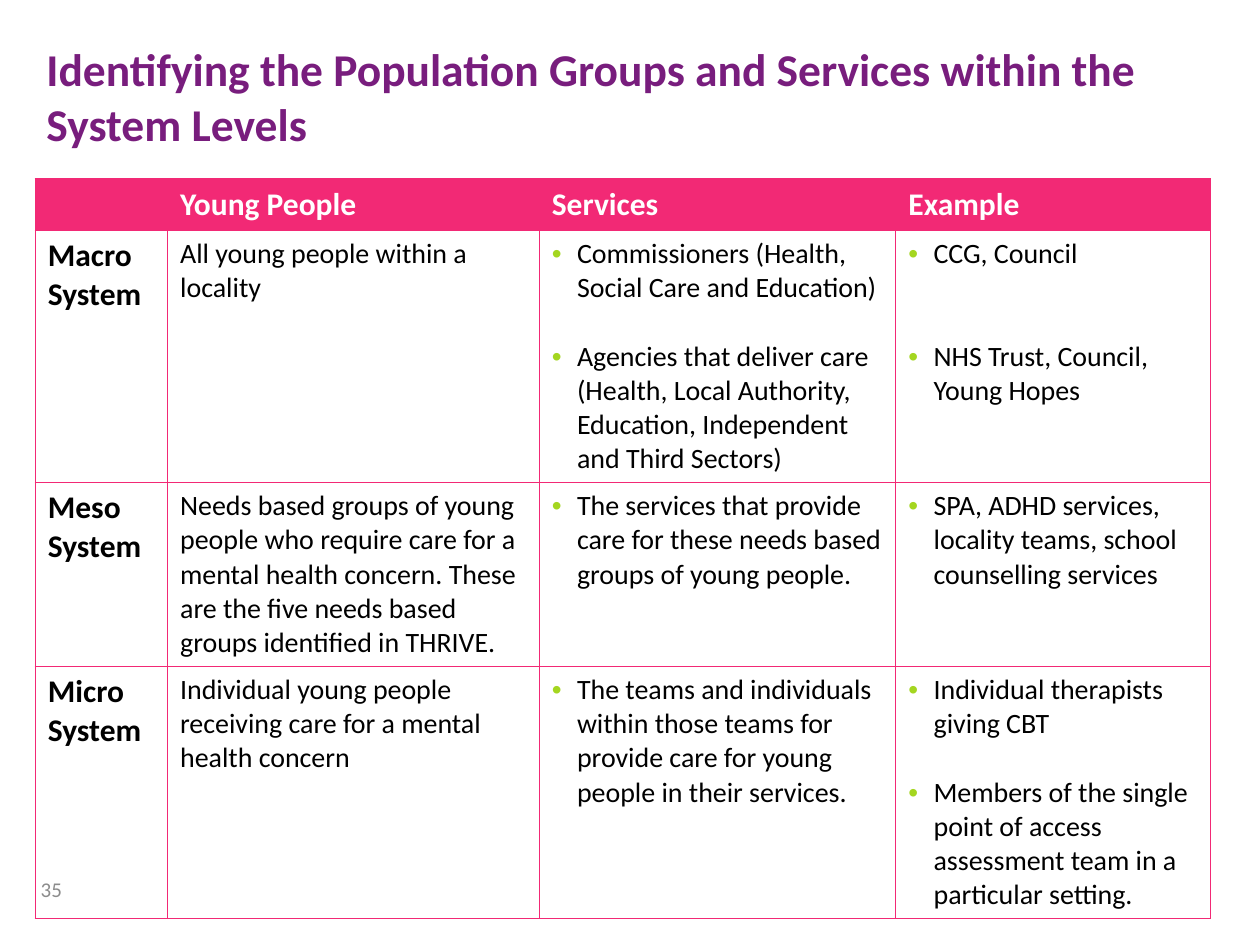
import pptx
import pptx.util
import pptx.dml.color
import pptx.enum.text
import pptx.oxml.ns
import lxml.etree
from dataclasses import dataclass

Inches = pptx.util.Inches
Pt = pptx.util.Pt

TITLE = "Identifying the Population Groups and Services within the System Levels"
PAGE_NUMBER = "35"
HEADERS = ["", "Young People", "Services", "Example"]
LEVELS = [
    (
        "Macro System",
        "All young people within a locality",
        [
            ("Commissioners (Health, Social Care and Education)", 0),
            ("Agencies that deliver care (Health, Local Authority, Education, "
             "Independent and Third Sectors)", 1),
        ],
        [("CCG, Council", 0), ("NHS Trust, Council, Young Hopes", 2)],
    ),
    (
        "Meso System",
        "Needs based groups of young people who require care for a mental health "
        "concern. These are the five needs based groups identified in THRIVE.",
        [("The services that provide care for these needs based groups of young people.", 0)],
        [("SPA, ADHD services, locality teams, school counselling services", 0)],
    ),
    (
        "Micro System",
        "Individual young people receiving care for a mental health concern",
        [("The teams and individuals within those teams for provide care for young "
          "people in their services.", 0)],
        [
            ("Individual therapists giving CBT", 0),
            ("Members of the single point of access assessment team in a "
             "particular setting.", 1),
        ],
    ),
]
COLUMN_WIDTHS = [1.05, 2.95, 2.83, 2.5]
ROW_HEIGHTS = [0.41, 2, 1.46, 2]


@dataclass(frozen=True)
class Theme:
    font: str = "Calibri"
    pink: str = "F22975"
    purple: str = "781D7D"
    green: str = "A4D620"
    grey: str = "8C8C8C"
    white: str = "FFFFFF"
    black: str = "000000"
    title_size: int = 26
    label_size: int = 18
    body_size: int = 16
    number_size: int = 12
    line_gap: float = 19.5
    border: float = 0.75


THEME = Theme()
FORMATS = {
    "title": {"size": Pt(THEME.title_size), "bold": True, "color": THEME.purple},
    "header": {"size": Pt(THEME.label_size), "bold": True, "color": THEME.white},
    "label": {"size": Pt(THEME.label_size), "bold": True, "color": THEME.black},
    "body": {"size": Pt(THEME.body_size), "bold": False, "color": THEME.black},
    "number": {"size": Pt(THEME.number_size), "bold": False, "color": THEME.grey},
}


def rgb(value):
    return pptx.dml.color.RGBColor.from_string(value)


def add_element(parent, tag, **attributes):
    element = lxml.etree.SubElement(parent, pptx.oxml.ns.qn(tag))
    for name, value in attributes.items():
        element.set(name, str(value))
    return element


def write(paragraph, text, format_name):
    run = paragraph.add_run()
    run.text = text
    run.font.name = THEME.font
    for name, value in FORMATS[format_name].items():
        if name == "color":
            run.font.color.rgb = rgb(value)
        else:
            setattr(run.font, name, value)


def add_text(slide, box, text, format_name, **frame_format):
    shape = slide.shapes.add_textbox(*map(Inches, box))
    frame = shape.text_frame
    frame.word_wrap = True
    for name, value in frame_format.items():
        setattr(frame, name, value)
    write(frame.paragraphs[0], text, format_name)
    return frame.paragraphs[0]


def write_bullets(frame, items):
    for index, (text, gap_lines) in enumerate(items):
        paragraph = frame.add_paragraph() if index else frame.paragraphs[0]
        if gap_lines:
            paragraph.space_before = Pt(gap_lines * THEME.line_gap)
        properties = paragraph._p.get_or_add_pPr()
        properties.set("marL", str(Inches(0.2)))
        properties.set("indent", str(Inches(-0.2)))
        color = add_element(properties, "a:buClr")
        add_element(color, "a:srgbClr", val=THEME.green)
        add_element(properties, "a:buFont", typeface="Arial")
        add_element(properties, "a:buChar", char="•")
        write(paragraph, text, "body")


def style_cell(cell, is_header):
    properties = cell._tc.get_or_add_tcPr()
    for side in ("a:lnL", "a:lnR", "a:lnT", "a:lnB"):
        line = add_element(properties, side, w=Pt(THEME.border))
        fill = add_element(line, "a:solidFill")
        add_element(fill, "a:srgbClr", val=THEME.pink)
    if is_header:
        cell.fill.solid()
        cell.fill.fore_color.rgb = rgb(THEME.pink)
    else:
        cell.fill.background()


def add_levels_table(slide):
    rows = [HEADERS, *LEVELS]
    frame = slide.shapes.add_table(
        len(rows), len(HEADERS), Inches(0.28), Inches(1.42),
        Inches(sum(COLUMN_WIDTHS)), Inches(sum(ROW_HEIGHTS)))
    table = frame.table
    table.horz_banding = False
    table.first_row = False
    for column, width in zip(table.columns, COLUMN_WIDTHS):
        column.width = Inches(width)
    for row, height in zip(table.rows, ROW_HEIGHTS):
        row.height = Inches(height)
    for row_index, values in enumerate(rows):
        for column_index, value in enumerate(values):
            cell = table.cell(row_index, column_index)
            style_cell(cell, row_index == 0)
            if isinstance(value, list):
                write_bullets(cell.text_frame, value)
            elif value:
                body_format = "body" if column_index else "label"
                format_name = body_format if row_index else "header"
                write(cell.text_frame.paragraphs[0], value, format_name)


def main():
    presentation = pptx.Presentation()
    presentation.slide_width = Inches(10)
    presentation.slide_height = Inches(7.5)
    slide = presentation.slides.add_slide(presentation.slide_layouts[6])
    number = add_text(slide, (0.12, 6.86, 0.47, 0.4), PAGE_NUMBER, "number",
                      vertical_anchor=pptx.enum.text.MSO_ANCHOR.MIDDLE)
    number.alignment = pptx.enum.text.PP_ALIGN.RIGHT
    add_text(slide, (0.27, 0.28, 9.45, 0.63), TITLE, "title")
    add_levels_table(slide)
    presentation.save("out.pptx")


if __name__ == "__main__":
    main()
